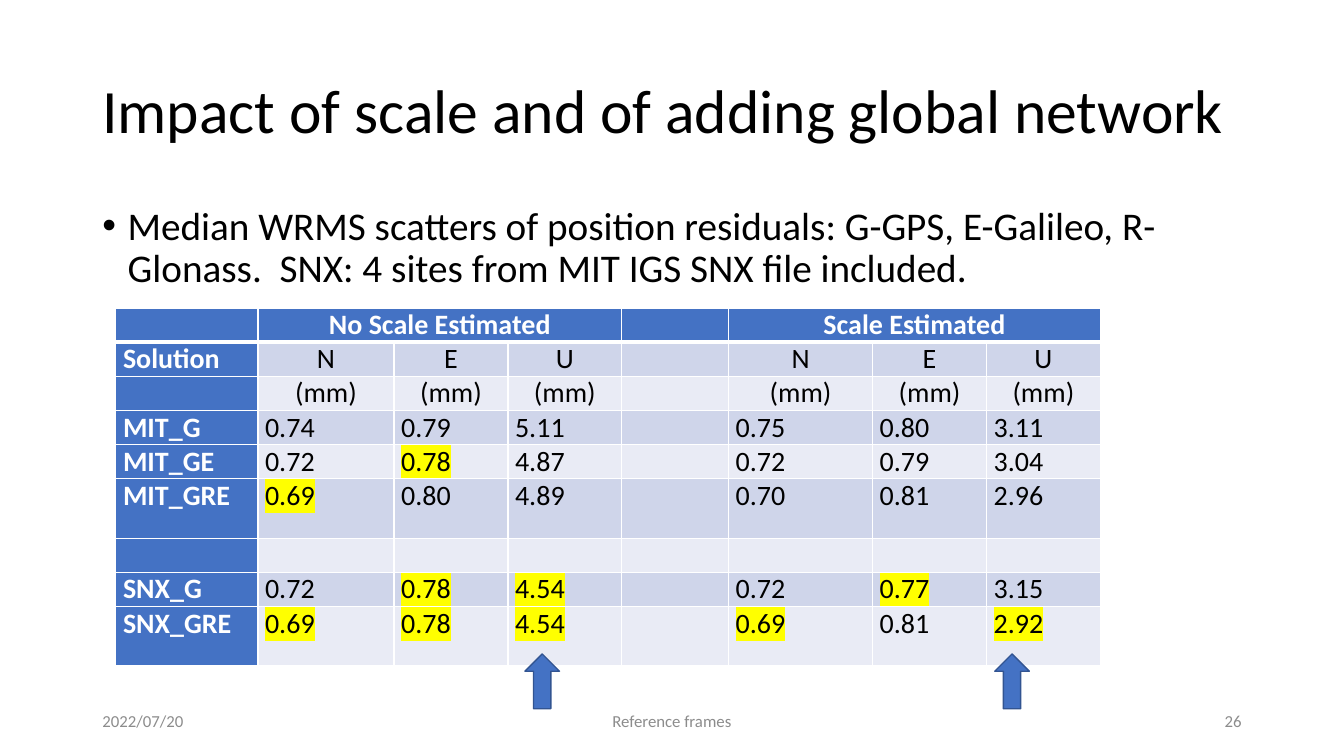
from pptx import Presentation
from pptx.dml.color import RGBColor
from pptx.enum.shapes import MSO_SHAPE as Shape
from pptx.enum.text import MSO_ANCHOR as Anchor, PP_ALIGN as Align
from pptx.oxml import parse_xml
from pptx.oxml.ns import nsdecls, qn
from pptx.util import Cm, Pt

FONT = "Calibri"
BLACK, WHITE, GRAY = "000000", "FFFFFF", "8C8C8C"
BLUE, DARK_BLUE, YELLOW = "4472C4", "325491", "FFFF00"
BANDS = ["CFD5EA", "E9EBF5"]

COLUMN_WIDTHS = [3.58, 3.43, 2.87, 2.87, 2.69, 3.63, 2.87, 2.87]
ROW_HEIGHTS = [0.86] * 5 + [1.5] + [0.86] * 2 + [1.5]
# An asterisk marks a highlighted value
ROWS = [
    ["", "No Scale Estimated", "", "", "", "Scale Estimated", "", ""],
    ["Solution", "N", "E", "U", "", "N", "E", "U"],
    ["", "(mm)", "(mm)", "(mm)", "", "(mm)", "(mm)", "(mm)"],
    ["MIT_G", "0.74", "0.79", "5.11", "", "0.75", "0.80", "3.11"],
    ["MIT_GE", "0.72", "0.78*", "4.87", "", "0.72", "0.79", "3.04"],
    ["MIT_GRE", "0.69*", "0.80", "4.89", "", "0.70", "0.81", "2.96"],
    [""] * 8,
    ["SNX_G", "0.72", "0.78*", "4.54*", "", "0.72", "0.77*", "3.15"],
    ["SNX_GRE", "0.69*", "0.78*", "4.54*", "", "0.69*", "0.81", "2.92*"],
]


def color(hex_string):
    return RGBColor.from_string(hex_string)


def style(paragraph, size, hex_string, bold=False, align=Align.LEFT):
    paragraph.alignment = align
    font = paragraph.font
    font.name, font.size, font.bold = FONT, Pt(size), bold
    font.color.rgb = color(hex_string)


def add_text(slide, box, text, size, hex_string, align=Align.LEFT, anchor=Anchor.MIDDLE):
    frame = slide.shapes.add_textbox(*map(Cm, box)).text_frame
    frame.word_wrap = True
    frame.vertical_anchor = anchor
    paragraph = frame.paragraphs[0]
    paragraph.text = text
    style(paragraph, size, hex_string, align=align)
    return paragraph


def add_title(slide, box, text):
    add_text(slide, box, text, 44, BLACK).line_spacing = 0.9


def add_bullet(slide, box, text):
    paragraph = add_text(slide, box, text, 28, BLACK, anchor=Anchor.TOP)
    paragraph.line_spacing = 0.9
    paragraph.space_before = Pt(10)
    properties = paragraph._p.get_or_add_pPr()
    properties.set("marL", str(Cm(0.64)))
    properties.set("indent", str(-Cm(0.64)))
    defaults = properties.find(qn("a:defRPr"))
    defaults.addprevious(parse_xml(f'<a:buFont {nsdecls("a")} typeface="Arial"/>'))
    defaults.addprevious(parse_xml(f'<a:buChar {nsdecls("a")} char="•"/>'))


def add_borders(cell, is_header):
    properties = cell._tc.get_or_add_tcPr()
    for side in "LRTB":
        width = Pt(3 if is_header and side == "B" else 1)
        properties.append(parse_xml(
            f'<a:ln{side} {nsdecls("a")} w="{width}"><a:solidFill>'
            f'<a:srgbClr val="{WHITE}"/></a:solidFill></a:ln{side}>'))


def fill_cell(cell, row, column, text):
    is_label = row == 0 or column == 0
    cell.margin_left = cell.margin_right = Cm(0.18)
    cell.margin_top = cell.margin_bottom = 0
    add_borders(cell, row == 0)
    cell.fill.solid()
    cell.fill.fore_color.rgb = color(BLUE if is_label else BANDS[(row - 1) % 2])
    paragraph = cell.text_frame.paragraphs[0]
    centered = row < 3 and column > 0
    style(paragraph, 20, WHITE if is_label else BLACK, is_label,
          Align.CENTER if centered else Align.LEFT)
    if text:
        run = paragraph.add_run()
        run.text = text.rstrip("*")
        if text.endswith("*"):
            run._r.get_or_add_rPr().append(parse_xml(
                f'<a:highlight {nsdecls("a")}><a:srgbClr val="{YELLOW}"/></a:highlight>'))


def add_results(slide, left, top):
    width, height = sum(COLUMN_WIDTHS), sum(ROW_HEIGHTS)
    table = slide.shapes.add_table(len(ROWS), len(COLUMN_WIDTHS),
                                   *map(Cm, (left, top, width, height))).table
    for column, column_width in zip(table.columns, COLUMN_WIDTHS):
        column.width = Cm(column_width)
    for row, row_height in zip(table.rows, ROW_HEIGHTS):
        row.height = Cm(row_height)
    for row, texts in enumerate(ROWS):
        for column, text in enumerate(texts):
            fill_cell(table.cell(row, column), row, column, text)
    for first in (1, 5):
        table.cell(0, first).merge(table.cell(0, first + 2))


def add_up_arrow(slide, box):
    arrow = slide.shapes.add_shape(Shape.UP_ARROW, *map(Cm, box))
    arrow.shadow.inherit = False
    arrow.fill.solid()
    arrow.fill.fore_color.rgb = color(BLUE)
    arrow.line.color.rgb = color(DARK_BLUE)
    arrow.line.width = Pt(1)


def add_footer(slide, left, top, width, height):
    side, middle = 7.62, 11.43
    add_text(slide, (left, top, side, height), "2022/07/20", 12, GRAY)
    add_text(slide, (left + (width - middle) / 2, top, middle, height),
             "Reference frames", 12, GRAY, Align.CENTER)
    add_text(slide, (left + width - side, top, side, height), "26", 12, GRAY, Align.RIGHT)


def main():
    presentation = Presentation()
    presentation.slide_width, presentation.slide_height = Cm(33.87), Cm(19.05)
    slide = presentation.slides.add_slide(presentation.slide_layouts[6])
    left, width = 2.33, 29.21
    add_title(slide, (left, 1.01, width, 3.68), "Impact of scale and of adding global network")
    add_bullet(slide, (left, 5.07, width, 12.09),
               "Median WRMS scatters of position residuals: G-GPS, E-Galileo, "
               "R-Glonass.  SNX: 4 sites from MIT IGS SNX file included.")
    add_footer(slide, left, 17.66, width, 1.01)
    add_results(slide, 2.92, 7.76)
    # Arrows under the two U columns
    for arrow_left in (13.23, 25.07):
        add_up_arrow(slide, (arrow_left, 16.48, 0.87, 1.38))
    presentation.save("out.pptx")


if __name__ == "__main__":
    main()
